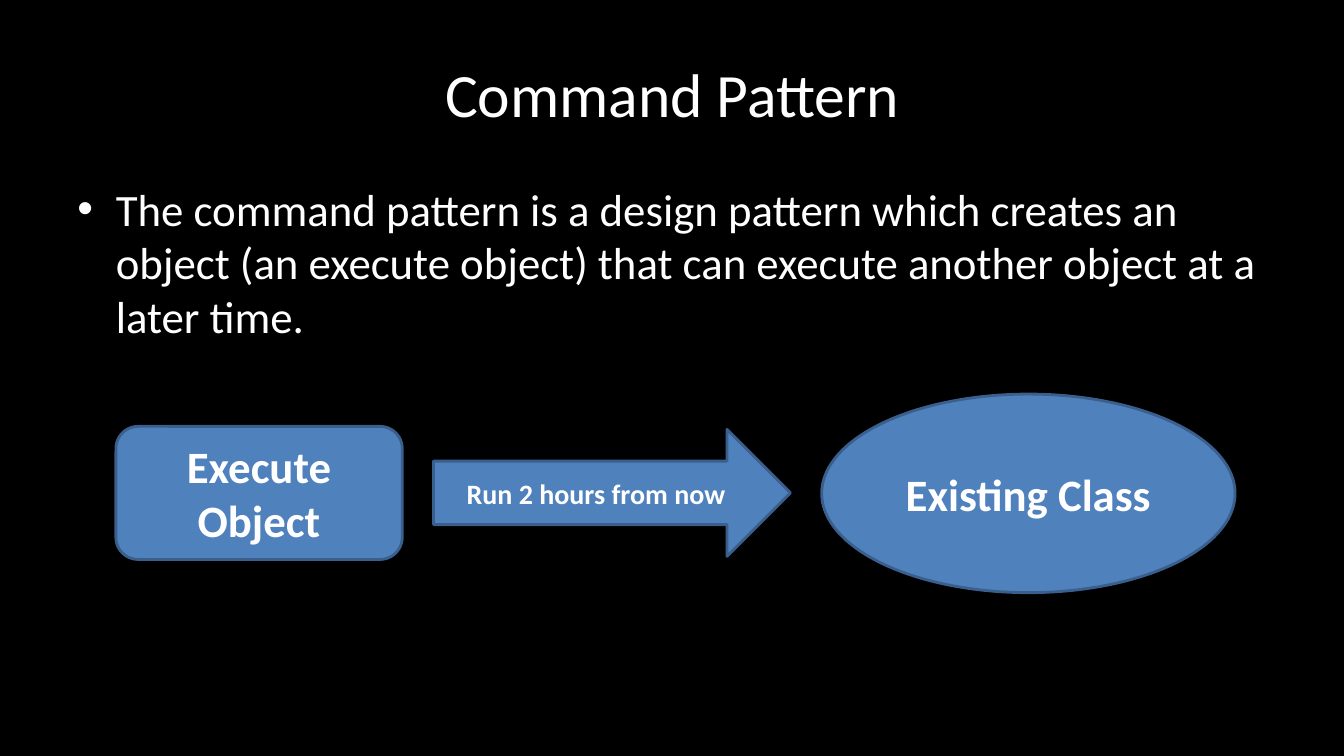
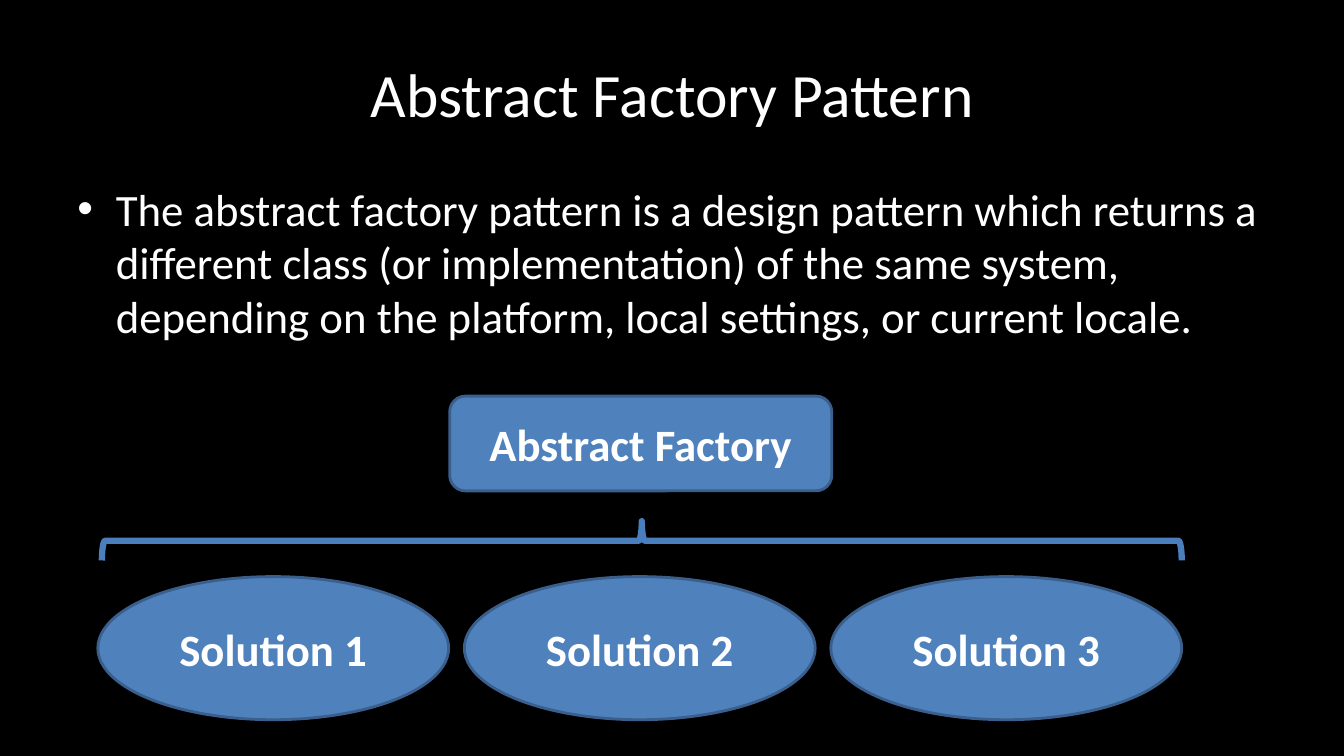
from pptx import Presentation
from pptx.dml.color import RGBColor
from pptx.enum import shapes, text
from pptx.oxml import parse_xml
from pptx.oxml.ns import nsdecls
from pptx.util import Inches, Pt

BLACK, WHITE = "000000", "FFFFFF"
BLUE, EDGE, BRACE = "4F81BD", "3A5F8C", "4B7EBC"
FONT = "Calibri"
KIND = shapes.MSO_SHAPE


def color(hex_code):
    return RGBColor.from_string(hex_code)


def write(box, words, size, bold=False, align=text.PP_ALIGN.CENTER,
          anchor=text.MSO_ANCHOR.MIDDLE):
    """Fill a box with one paragraph of white text and return the paragraph."""
    frame = box.text_frame
    frame.word_wrap = True
    frame.vertical_anchor = anchor
    frame.text = words
    paragraph = frame.paragraphs[0]
    paragraph.alignment = align
    font = paragraph.runs[0].font
    font.name, font.size, font.bold = FONT, Pt(size), bold
    font.color.rgb = color(WHITE)
    return paragraph


prs = Presentation()
prs.slide_width, prs.slide_height = Inches(13.33), Inches(7.5)
blank = prs.slide_layouts[6]

# Black background for every slide
background = prs.slide_master.background.fill
background.solid()
background.fore_color.rgb = color(BLACK)

# Diagram parts: kind, left, top, width, height, label, text size
command_parts = [
    (KIND.OVAL, 8.15, 3.91, 4.1, 1.97, "Existing Class", 32),
    (KIND.RIGHT_ARROW, 4.3, 4.26, 3.54, 1.26, "Run 2 hours from now", 20),
    (KIND.ROUNDED_RECTANGLE, 1.15, 4.23, 2.84, 1.32, "Execute Object", 32),
]
solution_step = 3.635
factory_parts = [
    (KIND.OVAL, 0.97 + i * solution_step, 5.72, 3.48, 1.42, f"Solution {i + 1}", 32)
    for i in range(3)
]
factory_parts.append(
    (KIND.ROUNDED_RECTANGLE, 4.46, 3.93, 3.79, 0.94, "Abstract Factory", 32))

patterns = [
    ("Command Pattern",
     "The command pattern is a design pattern which creates an object "
     "(an execute object) that can execute another object at a later time.",
     command_parts),
    ("Abstract Factory Pattern",
     "The abstract factory pattern is a design pattern which returns a different "
     "class (or implementation) of the same system, depending on the platform, "
     "local settings, or current locale.",
     factory_parts),
]

for heading, definition, parts in patterns:
    slide = prs.slides.add_slide(blank)

    # Title
    title = slide.shapes.add_textbox(Inches(0.67), Inches(0.3), Inches(12), Inches(1.25))
    write(title, heading, 44)

    # Bulleted definition
    body = slide.shapes.add_textbox(Inches(0.67), Inches(1.75), Inches(12), Inches(4.95))
    bullet = write(body, definition, 32, align=text.PP_ALIGN.LEFT,
                   anchor=text.MSO_ANCHOR.TOP)
    properties = bullet._p.get_or_add_pPr()
    properties.set("marL", str(Inches(0.38)))
    properties.set("indent", str(-Inches(0.38)))
    properties.append(parse_xml(f'<a:buFont {nsdecls("a")} typeface="Arial"/>'))
    properties.append(parse_xml(f'<a:buChar {nsdecls("a")} char="•"/>'))

    # Diagram
    for kind, left, top, width, height, label, size in parts:
        part = slide.shapes.add_shape(
            kind, Inches(left), Inches(top), Inches(width), Inches(height))
        part.shadow.inherit = False
        part.fill.solid()
        part.fill.fore_color.rgb = color(BLUE)
        part.line.color.rgb = color(EDGE)
        part.line.width = Pt(2)
        write(part, label, size, bold=True)

# Brace joining the factory to its solutions, on the last slide
brace = slide.shapes.add_shape(
    KIND.LEFT_BRACE, Inches(6.17), Inches(0.01), Inches(0.39), Inches(10.71))
brace.rotation = 90
brace.shadow.inherit = False
brace.fill.background()
brace.line.color.rgb = color(BRACE)
brace.line.width = Pt(4.5)

prs.save("out.pptx")
